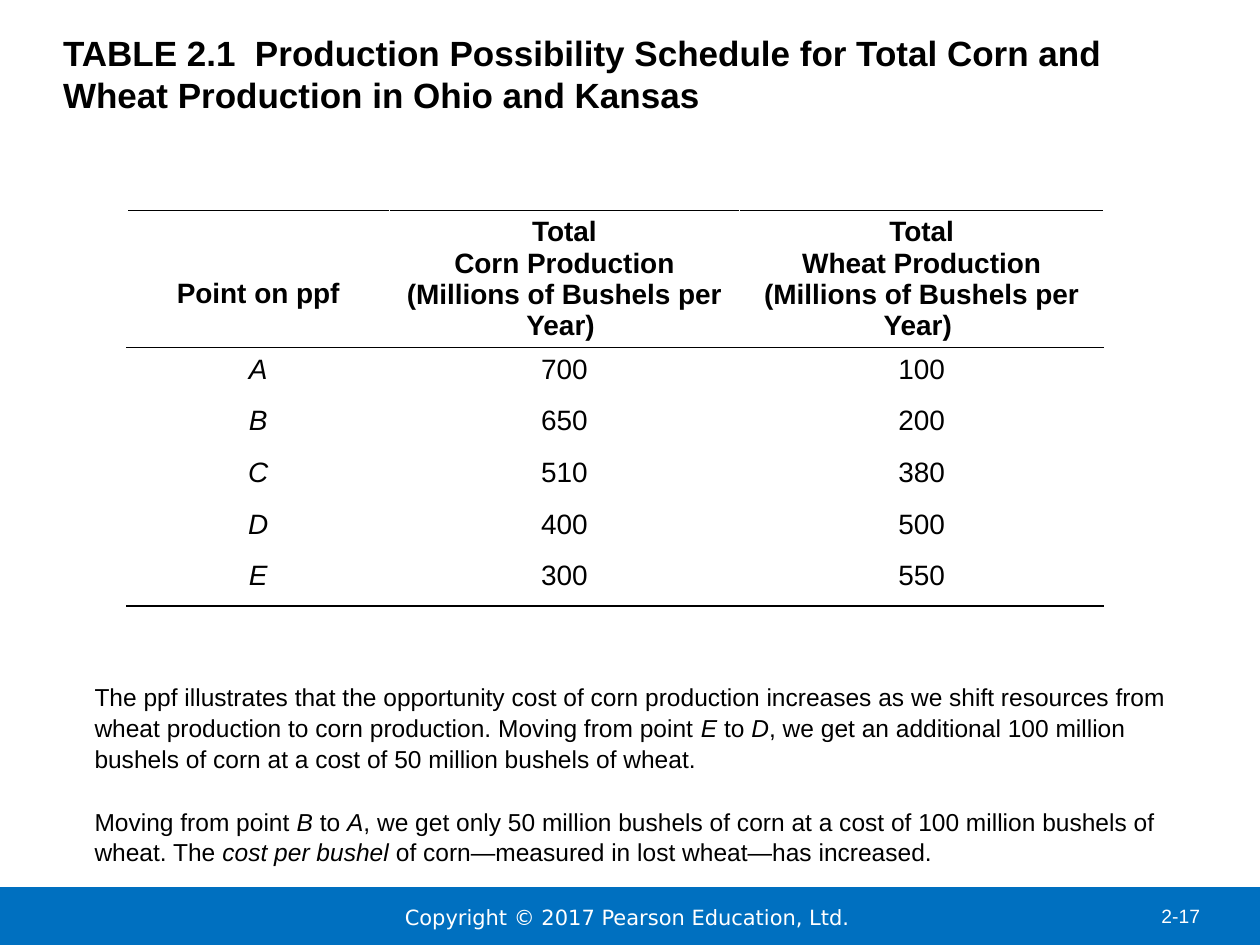
from lxml.etree import SubElement
from pptx import Presentation
from pptx.dml.color import RGBColor
from pptx.enum.shapes import MSO_SHAPE
from pptx.enum.text import MSO_ANCHOR, MSO_AUTO_SIZE, PP_ALIGN
from pptx.oxml.ns import qn
from pptx.util import Inches, Pt

BLACK = RGBColor(0x00, 0x00, 0x00)
WHITE = RGBColor(0xFF, 0xFF, 0xFF)
BLUE = RGBColor(0x00, 0x70, 0xC0)

HEADERS = [
    ["Point on ppf"],
    ["Total", "Corn Production", "(Millions of Bushels per Year) "],
    ["Total", "Wheat Production", "(Millions of Bushels per Year) "],
]
SCHEDULE = [
    ("A", "700", "100"),
    ("B", "650", "200"),
    ("C", "510", "380"),
    ("D", "400", "500"),
    ("E", "300", "550"),
]
EXPLANATION = [
    [
        ("The ppf illustrates that the opportunity cost of corn production increases as we shift "
         "resources from wheat production to corn production. Moving from point ", False),
        ("E", True),
        (" to ", False),
        ("D", True),
        (", we get an additional 100 million bushels of corn at a cost of 50 million bushels "
         "of wheat.", False),
    ],
    [
        ("Moving from point ", False),
        ("B", True),
        (" to ", False),
        ("A", True),
        (", we get only 50 million bushels of corn at a cost of 100 million bushels of wheat. "
         "The ", False),
        ("cost per bushel ", True),
        ("of corn—measured in lost wheat—has increased.", False),
    ],
]


class SlideBuilder:
    font_name = "Arial"

    def __init__(self, slide):
        self.slide = slide

    def add_run(self, paragraph, text, size, color=BLACK, bold=False, italic=False, name=None):
        run = paragraph.add_run()
        run.text = text
        run.font.name = name or self.font_name
        run.font.size = Pt(size)
        run.font.color.rgb = color
        run.font.bold = bold
        run.font.italic = italic

    def prepare_frame(self, frame, anchor=MSO_ANCHOR.TOP, inset=0.0):
        frame.word_wrap = True
        frame.auto_size = MSO_AUTO_SIZE.NONE
        frame.vertical_anchor = anchor
        frame.margin_left = frame.margin_right = Inches(inset)
        frame.margin_top = frame.margin_bottom = Inches(inset / 2)

    def paragraphs(self, frame, count):
        for _ in range(count - 1):
            frame.add_paragraph()
        return frame.paragraphs

    def title(self, text, left, top, width, height):
        shape = self.slide.shapes.title
        shape.left, shape.top = Inches(left), Inches(top)
        shape.width, shape.height = Inches(width), Inches(height)
        self.prepare_frame(shape.text_frame)
        paragraph = shape.text_frame.paragraphs[0]
        paragraph.alignment = PP_ALIGN.LEFT
        self.add_run(paragraph, text, 20, bold=True)

    def bar(self, left, top, width, height):
        shape = self.slide.shapes.add_shape(
            MSO_SHAPE.RECTANGLE, Inches(left), Inches(top), Inches(width), Inches(height))
        shape.shadow.inherit = False
        shape.fill.solid()
        shape.fill.fore_color.rgb = BLUE
        shape.line.fill.background()
        return shape

    def copyright_bar(self, text, left, top, width, height):
        frame = self.bar(left, top, width, height).text_frame
        self.prepare_frame(frame, MSO_ANCHOR.MIDDLE)
        paragraph = frame.paragraphs[0]
        paragraph.alignment = PP_ALIGN.CENTER
        self.add_run(paragraph, text, 12, WHITE, name="DejaVu Sans")

    def text(self, contents, left, top, width, height, size, color=BLACK,
             anchor=MSO_ANCHOR.TOP, inset=0.0, line_spacing=1.0, space_before=0):
        box = self.slide.shapes.add_textbox(
            Inches(left), Inches(top), Inches(width), Inches(height))
        self.prepare_frame(box.text_frame, anchor, inset)
        paragraphs = self.paragraphs(box.text_frame, len(contents))
        for index, (paragraph, runs) in enumerate(zip(paragraphs, contents)):
            paragraph.line_spacing = line_spacing
            if index:
                paragraph.space_before = Pt(space_before)
            for text, italic in runs:
                self.add_run(paragraph, text, size, color, italic=italic)

    def cell(self, cell, lines, bold=False, italic=False):
        cell.fill.background()
        for paragraph, line in zip(self.paragraphs(cell.text_frame, len(lines)), lines):
            paragraph.alignment = PP_ALIGN.CENTER
            self.add_run(paragraph, line, 16, bold=bold, italic=italic)

    def cell_borders(self, cell, sides):
        properties = cell._tc.get_or_add_tcPr()
        for index, side in enumerate(sides):
            line = SubElement(properties, qn(f"a:ln{side}"), w=str(Pt(1)))
            fill = SubElement(line, qn("a:solidFill"))
            SubElement(fill, qn("a:srgbClr"), val=str(BLACK))
            properties.insert(index, line)

    def table(self, headers, rows, left, top, column_widths, header_height, row_height):
        height = header_height + row_height * len(rows)
        table = self.slide.shapes.add_table(
            len(rows) + 1, len(headers), Inches(left), Inches(top),
            Inches(sum(column_widths)), Inches(height)).table
        table.first_row = False
        table.horz_banding = False
        for column, width in zip(table.columns, column_widths):
            column.width = Inches(width)
        for index, row in enumerate(table.rows):
            row.height = Inches(row_height if index else header_height)
        for column, lines in enumerate(headers):
            self.cell(table.cell(0, column), lines, bold=True)
            self.cell_borders(table.cell(0, column), "TB")
        for row, values in enumerate(rows, start=1):
            for column, value in enumerate(values):
                cell = table.cell(row, column)
                self.cell(cell, [value], italic=column == 0)
                if row == 1:
                    self.cell_borders(cell, "T")
                if row == len(rows):
                    self.cell_borders(cell, "B")
        return table


def main():
    presentation = Presentation()
    presentation.slide_width = Inches(10)
    presentation.slide_height = Inches(7.5)
    builder = SlideBuilder(presentation.slides.add_slide(presentation.slide_layouts[5]))

    builder.bar(-0.01, 7.04, 10.02, 0.47)
    builder.text([[("2-17", False)]], 9.12, 7.13, 0.76, 0.29, 11, WHITE, inset=0.1)
    builder.copyright_bar("Copyright © 2017 Pearson Education, Ltd. ", 1.55, 7.05, 6.91, 0.45)
    builder.title(
        "TABLE 2.1  Production Possibility Schedule for Total Corn and Wheat Production "
        "in Ohio and Kansas", 0.5, 0.25, 8.25, 0.83)
    table = builder.table(HEADERS, SCHEDULE, 1.01, 1.67, [2.08, 2.78, 2.89], 1.09, 0.41)
    table.cell(0, 0).margin_top = Inches(0.54)
    builder.text(EXPLANATION, 0.75, 5.42, 8.75, 1.46, 14, anchor=MSO_ANCHOR.BOTTOM,
                 line_spacing=1.05, space_before=18)

    presentation.save("out.pptx")


if __name__ == "__main__":
    main()
